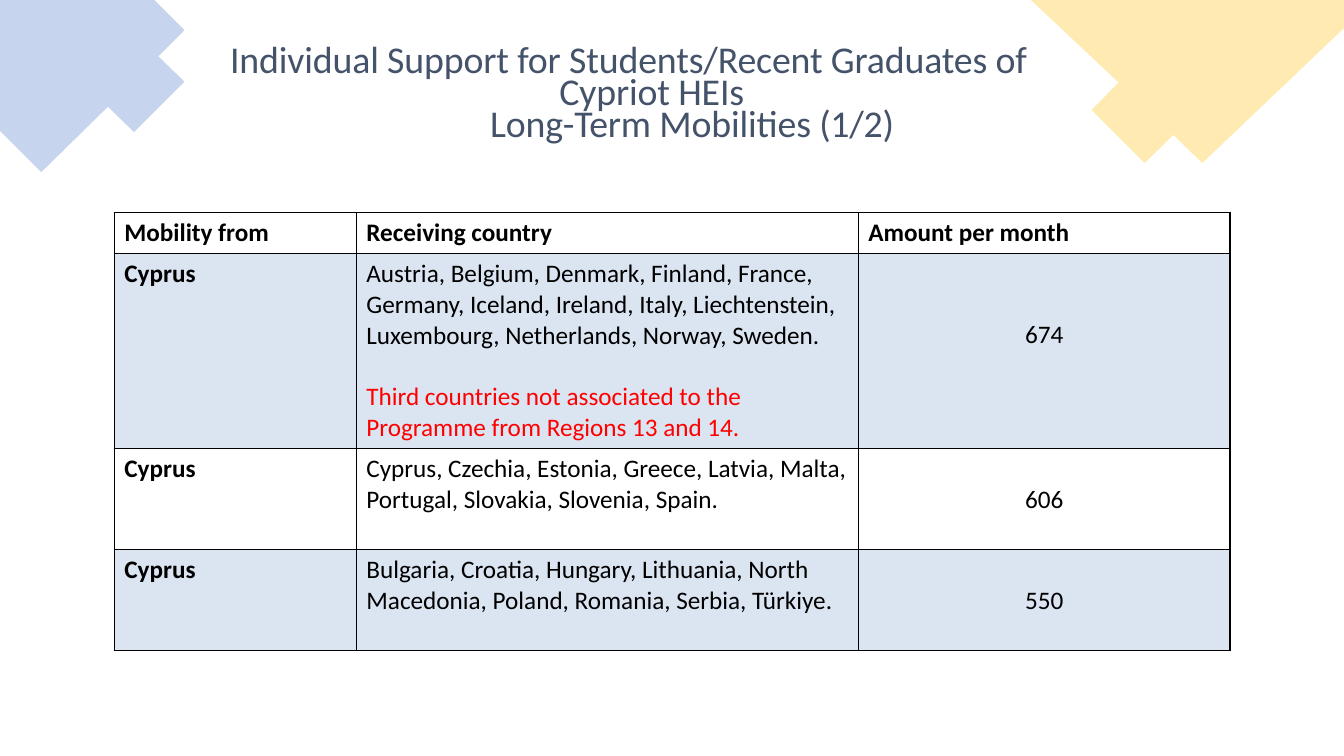
from pptx import Presentation
from pptx.dml.color import RGBColor
from pptx.enum.text import MSO_ANCHOR, MSO_AUTO_SIZE, PP_ALIGN
from pptx.oxml import parse_xml
from pptx.oxml.ns import nsdecls, qn
from pptx.util import Cm, Pt
from lxml.etree import SubElement

COLORS = {
    "blue": "4471C4",
    "yellow": "FFC000",
    "title": "44536A",
    "band": "4F81BD",
    "text": "000000",
    "note": "FF0000",
}
FONT = "Calibri"


def rgb(name):
    return RGBColor.from_string(COLORS[name])


def fill_translucent(fill, element, color, percent):
    """Fill with a colour at the given opacity; element is the XML that owns the fill."""
    fill.solid()
    fill.fore_color.rgb = rgb(color)
    clr = element.find(f".//{qn('a:solidFill')}/{qn('a:srgbClr')}")
    SubElement(clr, qn("a:alpha")).set("val", str(percent * 1000))


prs = Presentation()
prs.slide_width, prs.slide_height = Cm(33.87), Cm(19.05)
s = prs.slides.add_slide(prs.slide_layouts[5])

# Corner decorations, points in centimetres
corners = [
    ("blue", [(4.65, 0.76), (3.89, 0), (0, 0), (0, 3.3), (1.04, 4.34), (2.72, 2.69),
              (3.38, 3.33), (4.65, 2.06), (3.99, 1.42)]),
    ("yellow", [(33.87, 0), (25.98, 0), (28.19, 2.08), (27.51, 2.77), (28.85, 4.11),
                (29.57, 3.4), (30.3, 4.11), (33.87, 0.71)]),
]
for color, points in corners:
    start, *rest = [(Cm(x), Cm(y)) for x, y in points]
    builder = s.shapes.build_freeform(*start)
    builder.add_line_segments(rest, close=True)
    sp = builder.convert_to_shape()
    sp.shadow.inherit = False
    sp.line.fill.background()
    fill_translucent(sp.fill, sp._element.spPr, color, 30)

# Title
title = s.shapes.title
title.left, title.top, title.width, title.height = Cm(5.16), Cm(0.84), Cm(21.31), Cm(2.84)
tf = title.text_frame
tf.word_wrap = True
tf.auto_size = MSO_AUTO_SIZE.NONE
tf.vertical_anchor = MSO_ANCHOR.TOP
tf.margin_left = tf.margin_right = tf.margin_bottom = 0
tf.margin_top = Cm(0.38)

# Runs with letter spacing, left margin, first-line indent, space before
title_lines = [
    ([("Individual Support for Students/Recent Graduates of Cypriot HEIs", -10)], 1.22, -1.19, 10.7),
    ([("Long-Term Mobilities ", -10), ("(1/2)", -20)], 3.25, 0, 0),
]
for i, (runs, margin, indent, before) in enumerate(title_lines):
    p = tf.add_paragraph() if i else tf.paragraphs[0]
    p.alignment = PP_ALIGN.CENTER
    p.line_spacing = 0.7
    p.space_before = Pt(before)
    p.font.name, p.font.size, p.font.bold = FONT, Pt(27), False
    p.font.color.rgb = rgb("title")
    pPr = p._p.get_or_add_pPr()
    pPr.set("marL", str(Cm(margin)))
    pPr.set("indent", str(Cm(indent)))
    for text, spacing in runs:
        r = p.add_run()
        r.text = text
        r._r.get_or_add_rPr().set("spc", str(spacing))

# Table of monthly amounts
rows = [
    ("Mobility from", ["Receiving country"], "Amount per month"),
    ("Cyprus", ["Austria, Belgium, Denmark, Finland, France, Germany, Iceland, Ireland, Italy, "
                "Liechtenstein, Luxembourg, Netherlands, Norway, Sweden.",
                "Third countries not associated to the Programme from Regions 13 and 14."], "674"),
    ("Cyprus", ["Cyprus, Czechia, Estonia, Greece, Latvia, Malta, Portugal, Slovakia, "
                "Slovenia, Spain."], "606"),
    ("Cyprus", ["Bulgaria, Croatia, Hungary, Lithuania, North Macedonia, Poland, Romania, "
                "Serbia, Türkiye."], "550"),
]
widths = [6.1, 12.65, 9.37]
heights = [1.03, 4.82, 2.55, 2.55]
amount_tops = [0.13, 1.66, 0.9, 0.9]

table = s.shapes.add_table(len(rows), len(widths), Cm(2.88), Cm(5.36),
                           Cm(sum(widths)), Cm(sum(heights))).table
table.first_row = table.horz_banding = False
for column, width in zip(table.columns, widths):
    column.width = Cm(width)

for i, (origin, countries, amount) in enumerate(rows):
    table.rows[i].height = Cm(heights[i])
    for j, lines in enumerate([[origin], countries, [amount]]):
        cell = table.cell(i, j)
        if i % 2:
            fill_translucent(cell.fill, cell._tc, "band", 20)
        else:
            cell.fill.background()
        if j == 2:
            cell.margin_top = Cm(amount_tops[i])
        tcPr = cell._tc.get_or_add_tcPr()
        for k, side in enumerate(["lnL", "lnR", "lnT", "lnB"]):
            tcPr.insert(k, parse_xml(
                f'<a:{side} {nsdecls("a")} w="12700"><a:solidFill>'
                f'<a:srgbClr val="{COLORS["text"]}"/></a:solidFill></a:{side}>'))
        tf = cell.text_frame
        for n, text in enumerate(lines):
            p = tf.add_paragraph() if n else tf.paragraphs[0]
            p.text = text
            p.font.name, p.font.size = FONT, Pt(18)
            p.font.bold = i == 0 or j == 0
            p.font.color.rgb = rgb("note" if n else "text")
            p.space_before = Pt(22 * n)
            if i and j == 2:
                p.alignment = PP_ALIGN.CENTER

prs.save("out.pptx")
